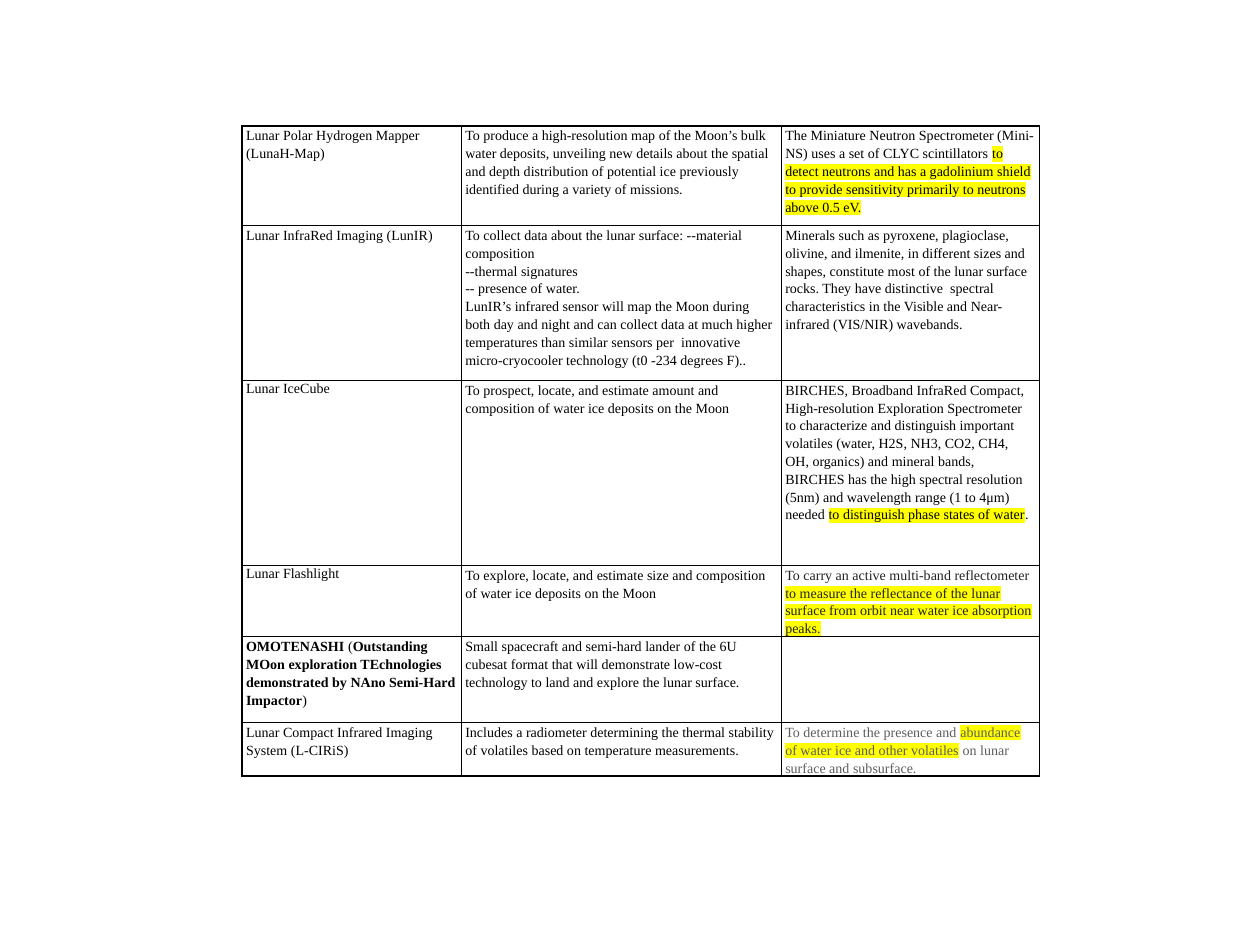
from dataclasses import dataclass

import lxml.etree
import pptx
import pptx.dml.color
import pptx.oxml.ns
import pptx.util

Cm = pptx.util.Cm
Pt = pptx.util.Pt
qn = pptx.oxml.ns.qn

COLORS = {
    "text": "000000",
    "dark": "222222",
    "gray": "5D5D5D",
    "border": "000000",
    "highlight": "FFFF00",
}
FONT = "Times New Roman"
COLUMN_WIDTHS = (4.42, 6.45, 5.21)


@dataclass(frozen=True)
class Run:
    text: str
    bold: bool = False
    highlight: bool = False


@dataclass(frozen=True)
class CellText:
    paragraphs: tuple[tuple[Run, ...], ...]
    color: str = "text"
    loose: bool = True


@dataclass(frozen=True)
class Mission:
    height: float
    name: CellText
    goal: CellText
    instrument: CellText


def plain(*lines: str, loose: bool = True) -> CellText:
    return CellText(tuple((Run(line),) for line in lines), loose=loose)


def rich(*runs: Run, color: str = "text") -> CellText:
    return CellText((runs,), color)


MISSIONS = (
    Mission(
        2.01,
        plain("Lunar Polar Hydrogen Mapper (LunaH-Map)"),
        plain(
            "To produce a high-resolution map of the Moon’s bulk water deposits, "
            "unveiling new details about the spatial and depth distribution of "
            "potential ice previously identified during a variety of missions."
        ),
        rich(
            Run("The Miniature Neutron Spectrometer (Mini-NS) uses a set of CLYC scintillators "),
            Run(
                "to detect neutrons and has a gadolinium shield to provide "
                "sensitivity primarily to neutrons above 0.5 eV.",
                highlight=True,
            ),
        ),
    ),
    Mission(
        3.12,
        plain("Lunar InfraRed Imaging (LunIR)"),
        plain(
            "To collect data about the lunar surface: --material composition",
            "--thermal signatures",
            "-- presence of water.",
            "LunIR’s infrared sensor will map the Moon during both day and night "
            "and can collect data at much higher temperatures than similar sensors "
            "per  innovative micro-cryocooler technology (t0 -234 degrees F)..",
        ),
        plain(
            "Minerals such as pyroxene, plagioclase, olivine, and ilmenite, in "
            "different sizes and shapes, constitute most of the lunar surface rocks. "
            "They have distinctive  spectral  characteristics in the Visible "
            "and Near-infrared (VIS/NIR) wavebands."
        ),
    ),
    Mission(
        3.73,
        plain("Lunar IceCube", loose=False),
        plain(
            "To prospect, locate, and estimate amount and composition of "
            "water ice deposits on the Moon"
        ),
        rich(
            Run(
                "BIRCHES, Broadband InfraRed Compact, High-resolution Exploration "
                "Spectrometer to characterize and distinguish important volatiles "
                "(water, H2S, NH3, CO2, CH4, OH, organics) and mineral bands, "
                "BIRCHES has the high spectral resolution (5nm) and wavelength "
                "range (1 to 4μm) needed "
            ),
            Run("to distinguish phase states of water", highlight=True),
            Run("."),
        ),
    ),
    Mission(
        1.42,
        plain("Lunar Flashlight", loose=False),
        plain(
            "To explore, locate, and estimate size and composition of "
            "water ice deposits on the Moon"
        ),
        rich(
            Run("To carry an active multi-band reflectometer "),
            Run(
                "to measure the reflectance of the lunar surface from orbit near "
                "water ice absorption peaks.",
                highlight=True,
            ),
            color="dark",
        ),
    ),
    Mission(
        1.73,
        rich(
            Run("OMOTENASHI", bold=True),
            Run(" ("),
            Run(
                "Outstanding MOon exploration TEchnologies demonstrated by "
                "NAno Semi-Hard Impactor",
                bold=True,
            ),
            Run(")"),
        ),
        plain(
            "Small spacecraft and semi-hard lander of the 6U cubesat format that will "
            "demonstrate low-cost technology to land and explore the lunar surface."
        ),
        rich(),
    ),
    Mission(
        0.91,
        plain("Lunar Compact Infrared Imaging System (L-CIRiS)"),
        plain(
            "Includes a radiometer determining the thermal stability of volatiles "
            "based on temperature measurements."
        ),
        rich(
            Run("To determine the presence and "),
            Run("abundance of water ice and other volatiles", highlight=True),
            Run(" on lunar surface and subsurface."),
            color="gray",
        ),
    ),
)


def add_color(parent, tag: str, color: str) -> None:
    holder = lxml.etree.SubElement(parent, qn(tag))
    lxml.etree.SubElement(holder, qn("a:srgbClr"), val=COLORS[color])


def set_borders(cell) -> None:
    tc_pr = cell._tc.get_or_add_tcPr()
    for side in ("a:lnL", "a:lnR", "a:lnT", "a:lnB"):
        line = lxml.etree.SubElement(tc_pr, qn(side), w=str(Pt(1)))
        add_color(line, "a:solidFill", "border")


def fill_cell(cell, content: CellText) -> None:
    cell.margin_left = cell.margin_right = Cm(0.08)
    cell.margin_top = cell.margin_bottom = 0
    set_borders(cell)
    cell.fill.background()
    tf = cell.text_frame
    for i, runs in enumerate(content.paragraphs):
        p = tf.add_paragraph() if i else tf.paragraphs[0]
        if content.loose:
            p.line_spacing = 1.15
        else:
            p.space_after = Pt(3)
        p.font.name = FONT
        p.font.size = Pt(8)
        p.font.color.rgb = pptx.dml.color.RGBColor.from_string(COLORS[content.color])
        for run in runs:
            r = p.add_run()
            r.text = run.text
            if run.bold:
                r.font.bold = True
            if run.highlight:
                add_color(r._r.get_or_add_rPr(), "a:highlight", "highlight")


def add_mission_table(s, missions: tuple[Mission, ...]) -> None:
    height = sum(mission.height for mission in missions)
    table = s.shapes.add_table(
        len(missions), len(COLUMN_WIDTHS),
        Cm(4.88), Cm(2.54), Cm(sum(COLUMN_WIDTHS)), Cm(height),
    ).table
    table.first_row = table.horz_banding = False
    for column, width in zip(table.columns, COLUMN_WIDTHS):
        column.width = Cm(width)
    for row, mission in zip(table.rows, missions):
        row.height = Cm(mission.height)
        for cell, content in zip(row.cells, (mission.name, mission.goal, mission.instrument)):
            fill_cell(cell, content)


prs = pptx.Presentation()
prs.slide_width, prs.slide_height = Cm(25.4), Cm(19.05)
s = prs.slides.add_slide(prs.slide_layouts[6])
add_mission_table(s, MISSIONS)
prs.save("out.pptx")
